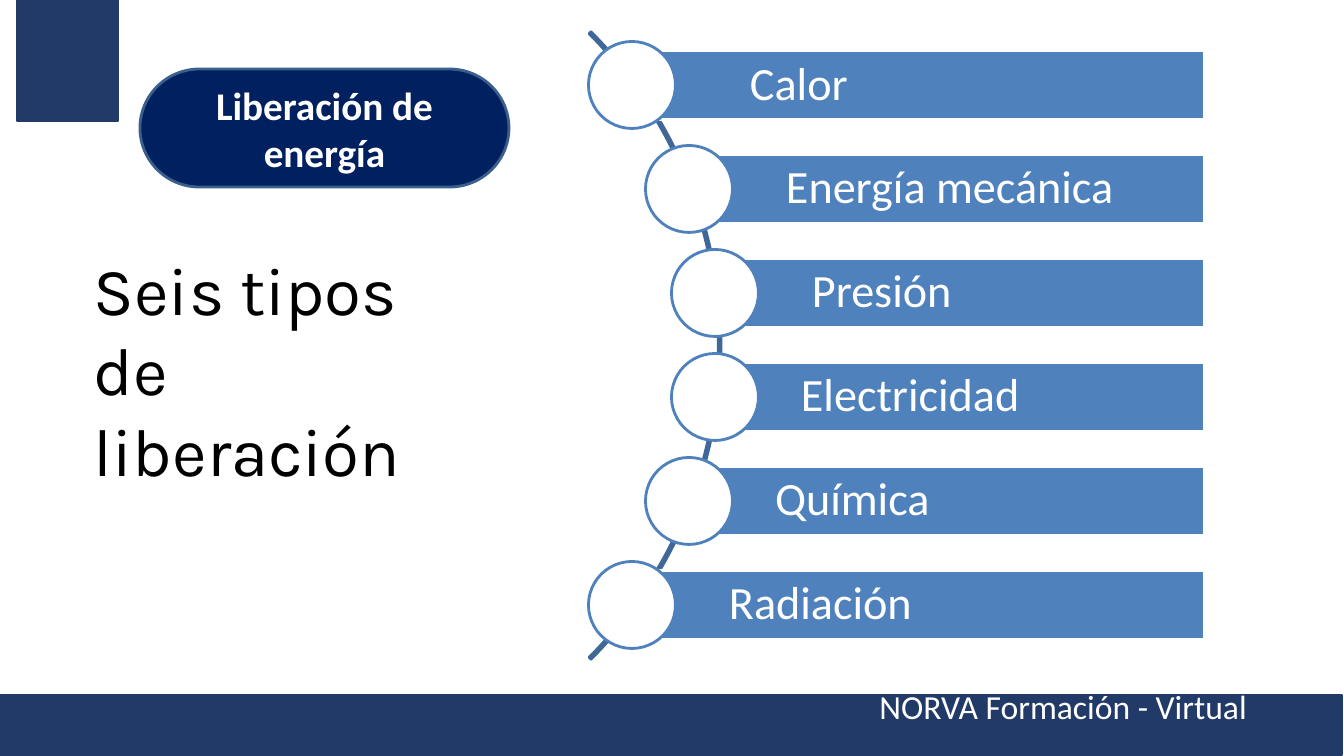
from pptx import Presentation
from pptx.dml.color import RGBColor
from pptx.enum import shapes, text
from pptx.util import Emu, Pt

# label, centre of its circle, gap between circle centre and text
TYPES = [
    ("Calor", 632, 118),
    ("Energía mecánica", 689, 97),
    ("Presión", 715, 97),
    ("Electricidad", 715, 86),
    ("Química", 689, 86),
    ("Radiación", 632, 97),
]
TITLE = "Seis tipos de liberación"
BADGE = "Liberación de energía"
FOOTER = "NORVA Formación - Virtual"

WIDE, HIGH = 1344, 756
FIRST, STEP = 85, 104          # circle centres, top to bottom
BAR, DISC, EDGE = 69, 87, 1204  # bar height, circle size, right end of bars

WHITE = RGBColor(0xFF, 0xFF, 0xFF)
BLACK = RGBColor(0, 0, 0)
NAVY = RGBColor(0x21, 0x3A, 0x67)
DEEP = RGBColor(0x00, 0x20, 0x60)
RIM = RGBColor(0x3A, 0x5F, 0x8C)
BLUE = RGBColor(0x4F, 0x81, 0xBD)
STEEL = RGBColor(0x3F, 0x67, 0x97)

KIND = shapes.MSO_SHAPE
ALIGN = text.PP_ALIGN
ANCHOR = text.MSO_ANCHOR


def px(n):
    return Emu(round(n * 9144000 / 1008))


def draw(kind, left, top, wide, high, fill, line):
    shape = slide.shapes.add_shape(kind, px(left), px(top), px(wide), px(high))
    shape.shadow.inherit = False
    shape.fill.solid()
    shape.fill.fore_color.rgb = fill
    shape.line.color.rgb = line
    shape.line.width = Pt(2)
    return shape


def write(shape, words, size, color, align, anchor, font="Calibri", bold=False):
    frame = shape.text_frame
    frame.word_wrap = True
    frame.vertical_anchor = anchor
    para = frame.paragraphs[0]
    para.alignment = align
    run = para.add_run()
    run.text = words
    run.font.name = font
    run.font.size = Pt(size)
    run.font.bold = bold
    run.font.color.rgb = color
    return frame


def label(left, top, wide, high):
    return slide.shapes.add_textbox(px(left), px(top), px(wide), px(high))


deck = Presentation()
deck.slide_width, deck.slide_height = px(WIDE), px(HIGH)
slide = deck.slides.add_slide(deck.slide_layouts[6])

draw(KIND.RECTANGLE, 17, 0, 101, 121, NAVY, NAVY)
draw(KIND.RECTANGLE, -2, 695, WIDE, 60, NAVY, NAVY)
foot = write(label(847, 686, 400, 41), FOOTER, 24, WHITE, ALIGN.RIGHT, ANCHOR.TOP)
foot.margin_left = foot.margin_right = foot.margin_top = foot.margin_bottom = 0

arc = draw(KIND.BLOCK_ARC, -166, -98, 887, 887, BLUE, STEEL)
for i, value in enumerate((189, 27, 0.003)):
    arc.adjustments[i] = value

for i, (name, mid, gap) in enumerate(TYPES):
    y = FIRST + STEP * i
    bar = draw(KIND.RECTANGLE, mid, y - BAR / 2, EDGE - mid, BAR, BLUE, WHITE)
    frame = write(bar, name, 33, WHITE, ALIGN.LEFT, ANCHOR.MIDDLE)
    frame.margin_left = px(gap)
    frame.margin_top = frame.margin_right = frame.margin_bottom = px(9)
    frame.paragraphs[0].line_spacing = 0.9
    draw(KIND.OVAL, mid - DISC / 2, y - DISC / 2, DISC, DISC, WHITE, BLUE)

write(label(84, 243, 355, 173), TITLE, 48, BLACK, ALIGN.LEFT, ANCHOR.TOP, "Karla")
badge = draw(KIND.FLOWCHART_TERMINATOR, 140, 69, 369, 118, DEEP, RIM)
write(badge, BADGE, 28, WHITE, ALIGN.CENTER, ANCHOR.MIDDLE, bold=True)

deck.save("out.pptx")
